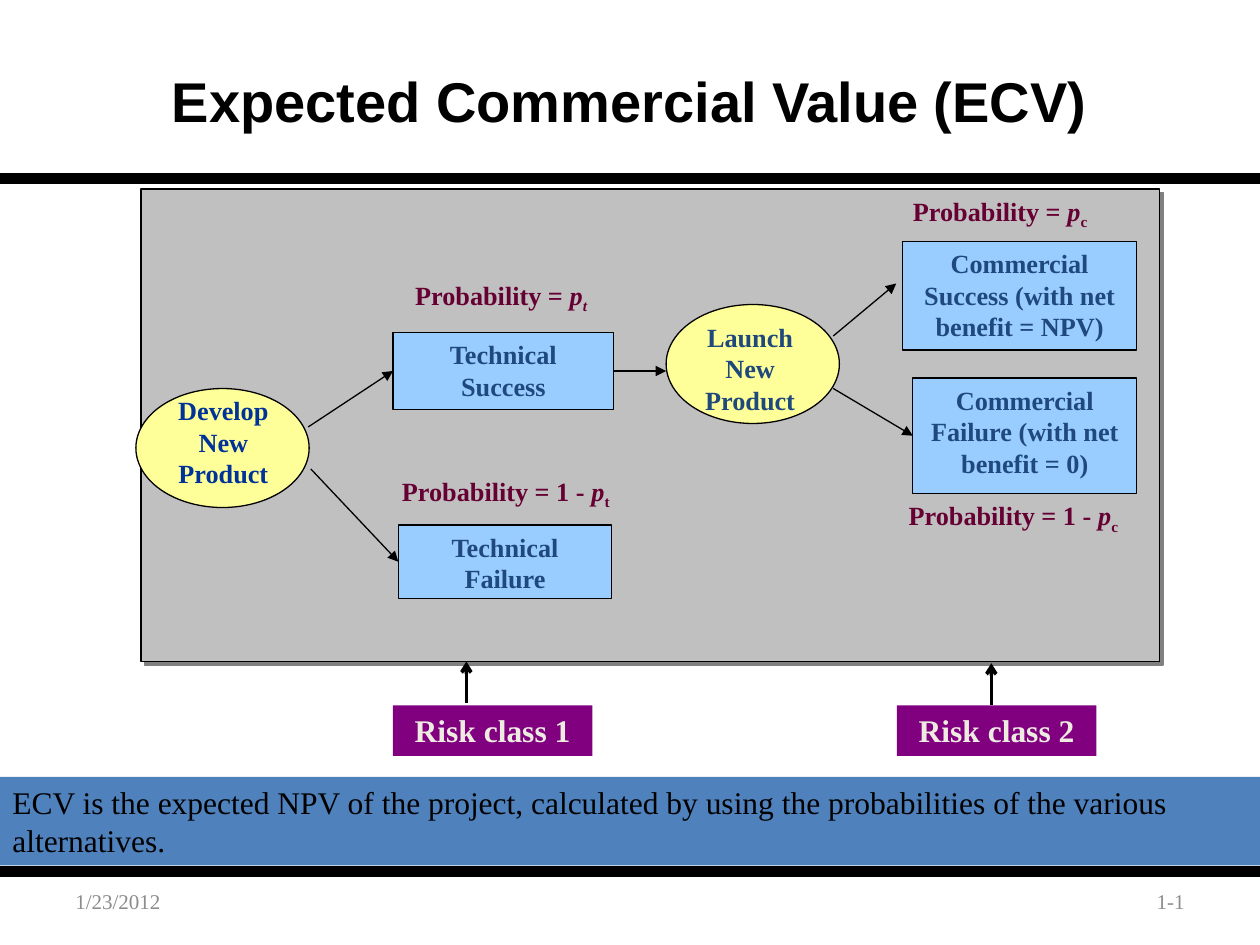
from lxml import etree
from pptx import Presentation
from pptx.dml.color import RGBColor
from pptx.enum import shapes, text
from pptx.oxml import ns, parse_xml
from pptx.util import Pt

SERIF = "Times New Roman"
NAVY, PLUM, GRAY = "1F497D", "660033", "C0C0C0"
RECT, OVAL = shapes.MSO_SHAPE.RECTANGLE, shapes.MSO_SHAPE.OVAL
LEFT, CENTER, RIGHT = text.PP_ALIGN.LEFT, text.PP_ALIGN.CENTER, text.PP_ALIGN.RIGHT
TOP, MIDDLE = text.MSO_ANCHOR.TOP, text.MSO_ANCHOR.MIDDLE


def color(hex_string):
    return RGBColor.from_string(hex_string)


def style(r, size, hex_string, bold=False, font=SERIF):
    r.font.size = Pt(size)
    r.font.name = font
    r.font.bold = bold
    r.font.color.rgb = color(hex_string)


def write(sp, words, size, hex_string, bold=False, align=CENTER, anchor=TOP, font=SERIF):
    tf = sp.text_frame
    tf.word_wrap = True
    tf.vertical_anchor = anchor
    tf.text = words
    p = tf.paragraphs[0]
    p.alignment = align
    style(p.runs[0], size, hex_string, bold, font)
    return p


def add_text(s, box, *args, **kwargs):
    sp = s.shapes.add_textbox(*map(Pt, box))
    return write(sp, *args, **kwargs)


def add_block(s, kind, box, fill, line=None):
    sp = s.shapes.add_shape(kind, *map(Pt, box))
    sp.shadow.inherit = False
    sp.fill.solid()
    sp.fill.fore_color.rgb = color(fill)
    if line:
        sp.line.color.rgb = color("000000")
        sp.line.width = Pt(line)
    else:
        sp.line.fill.background()
    return sp


def add_line(s, start, end, width, tail=None):
    cn = s.shapes.add_connector(shapes.MSO_CONNECTOR.STRAIGHT, *map(Pt, start + end))
    cn.line.color.rgb = color("000000")
    cn.line.width = Pt(width)
    if tail:
        etree.SubElement(cn.line._get_or_add_ln(), ns.qn("a:tailEnd"), type=tail)
    etree.SubElement(cn._element.spPr, ns.qn("a:effectLst"))
    return cn


def add_panel_shadow(sp):
    effects = sp._element.spPr.find(ns.qn("a:effectLst"))
    effects.append(parse_xml(
        f'<a:outerShdw {ns.nsdecls("a")} blurRad="0" dist="{Pt(2.8)}" dir="2700000" '
        'algn="ctr" rotWithShape="0"><a:srgbClr val="808080"/></a:outerShdw>'))


def add_probability(s, box, lead, subscript, italic=False):
    p = add_text(s, box, lead, 15, PLUM, True, LEFT)
    for words, slanted in (("p", True), (subscript, italic)):
        r = p.add_run()
        r.text = words
        style(r, 15, PLUM, True)
        r.font.italic = slanted
    p.runs[-1].font._element.set("baseline", "-25000")


def header(s, x, y, w, h):
    add_line(s, (x, y + h), (x + w, y + h), 6)
    add_text(s, (x + 36, y + 12, w - 72, h - 12), "Expected Commercial Value (ECV)",
             32, "000000", True, anchor=MIDDLE, font="Arial")


def decision_tree(s, x, y, w, h):
    def at(left, top, *size):
        return (x + left, y + top, *size)

    add_panel_shadow(add_block(s, RECT, (x, y, w, h), GRAY, 1))

    for oval, label, words, hex_string in (
            ((-3, 114), (5, 114), "Develop New Product", "003399"),
            ((300, 66), (306, 72), "Launch New Product", NAVY)):
        add_block(s, OVAL, at(*oval, 99, 68), "FFFF99", 0.75)
        add_text(s, at(*label, 84, 60), words, 15, hex_string, True)

    arrows = [add_line(s, at(*start), at(*end), 0.75, "triangle") for start, end in (
        ((95.5, 136), (144, 104)),
        ((97, 160), (147, 213)),
        ((270, 104), (300, 104)),
        ((395.5, 84), (431.5, 54)),
        ((395.5, 114), (441, 141)))]
    to_success, to_failure, to_launch, _, to_loss = arrows

    outcomes = []
    for box, words in (
            ((144, 82, 126, 44), "Technical Success"),
            ((147, 192, 122, 42), "Technical Failure"),
            ((435, 30, 134, 62), "Commercial Success (with net benefit = NPV)"),
            ((441, 108, 128, 66), "Commercial Failure (with net benefit = 0)")):
        sp = add_block(s, RECT, at(*box), "99CCFF", 0.75)
        write(sp, words, 15, NAVY, True)
        outcomes.append(sp)
    success, failure, _, loss = outcomes
    to_success.end_connect(success, 1)
    to_failure.end_connect(failure, 1)
    to_launch.begin_connect(success, 3)
    to_loss.end_connect(loss, 1)

    add_probability(s, at(149.5, 48, 156, 24), "Probability = ", "t", True)
    add_probability(s, at(142, 160, 169, 32), "Probability = 1 - ", "t")
    add_probability(s, at(434, 0, 160, 24), "Probability = ", "c")
    add_probability(s, at(431.5, 174, 168, 42), "Probability = 1 - ", "c")


def risk_class(s, x, y, w, h, words, arrow_x, arrow_y):
    sp = add_block(s, RECT, (x, y, w, h), "800080")
    write(sp, words, 18, "EEECE1", True)
    add_line(s, (x + arrow_x, y + arrow_y), (x + arrow_x, y + arrow_y - 24), 2, "arrow")


def summary(s, x, y, w, h):
    sp = add_block(s, RECT, (x, y, w, h), "4F81BD")
    write(sp, "ECV is the expected NPV of the project, calculated by using the "
              "probabilities of the various alternatives.", 18, "000000", align=LEFT)


def footer(s, x, y, w, h):
    add_line(s, (x, y), (x + w, y), 6)
    for left, words, align in ((36, "1/23/2012", LEFT), (w - 204, "1-1", RIGHT)):
        add_text(s, (x + left, y + 2.5, 168, h), words, 12, "8C8C8C",
                 align=align, anchor=MIDDLE)


def main():
    prs = Presentation()
    prs.slide_width, prs.slide_height = Pt(720), Pt(540)
    s = prs.slides.add_slide(prs.slide_layouts[6])
    header(s, 0, 0, 720, 102)
    footer(s, 0, 498, 720, 29)
    decision_tree(s, 80.64, 108, 582, 270)
    risk_class(s, 224.5, 403, 114, 29, "Risk class 1", 42, -1)
    risk_class(s, 512.5, 403, 114, 29, "Risk class 2", 54, 0)
    summary(s, 0, 444, 720, 50.5)
    prs.save("out.pptx")


if __name__ == "__main__":
    main()
